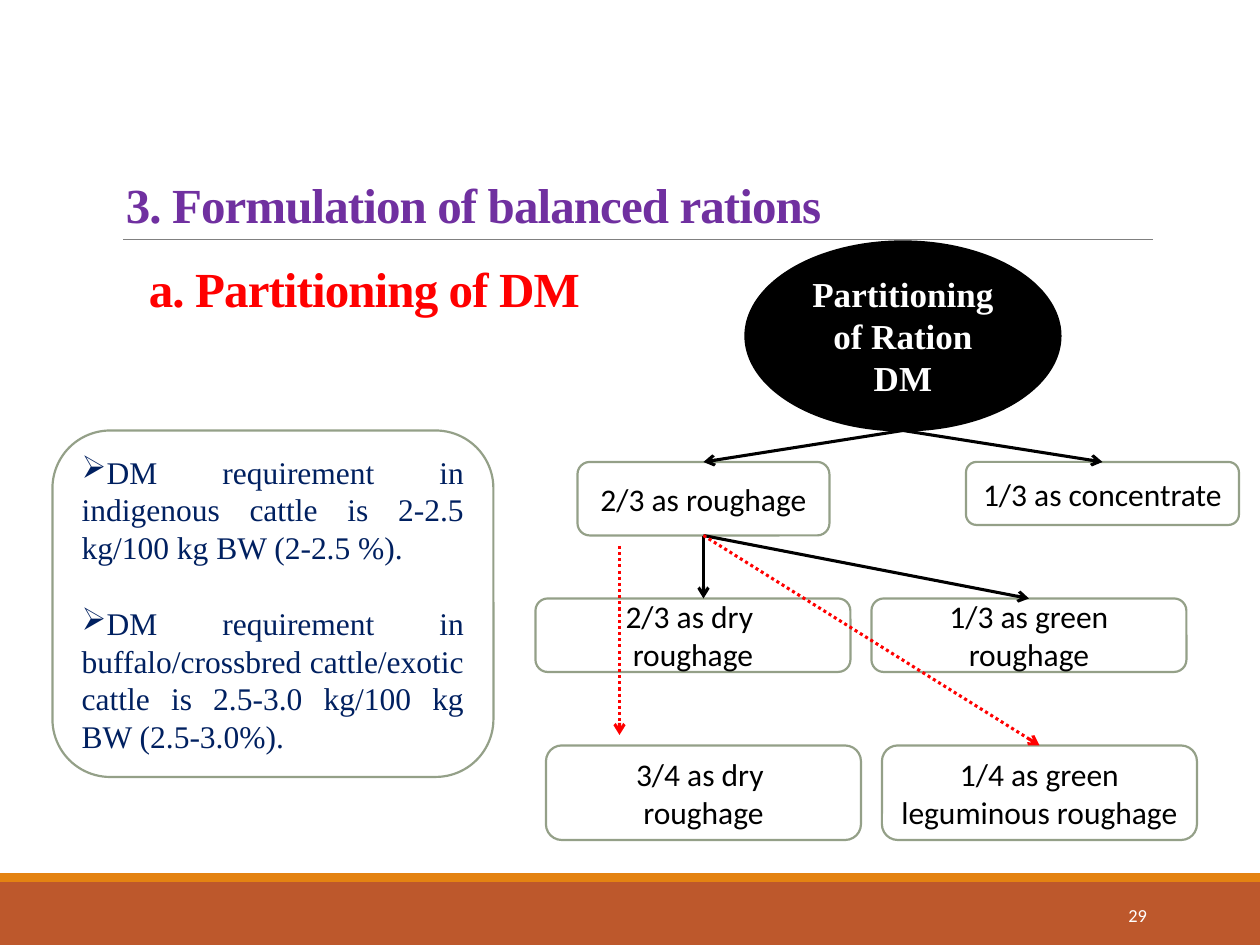
from dataclasses import dataclass
from lxml.etree import SubElement
from pptx import Presentation
from pptx.dml.color import RGBColor
from pptx.enum.dml import MSO_LINE
from pptx.enum.shapes import MSO_CONNECTOR, MSO_SHAPE
from pptx.enum.text import MSO_ANCHOR, PP_ALIGN
from pptx.oxml.ns import qn
from pptx.util import Inches, Pt


@dataclass(frozen=True)
class Theme:
    serif: str = "Times New Roman"
    sans: str = "Calibri"
    white: str = "FFFFFF"
    black: str = "000000"
    red: str = "FF0000"
    purple: str = "7030A0"
    navy: str = "002060"
    sage: str = "94A088"
    gray: str = "808080"
    rust: str = "BD582C"
    orange: str = "E48312"
    head: float = 28
    hub: float = 20
    body: float = 18
    small: float = 10.5
    edge: float = 1.25
    arrow: float = 1.75


class Deck:
    def __init__(self, theme, cols=120, rows=90):
        self.theme = theme
        self.prs = Presentation()
        self.prs.slide_width = Inches(10)
        self.prs.slide_height = Inches(7.5)
        self.col = self.prs.slide_width / cols
        self.row = self.prs.slide_height / rows
        self.slide = self.prs.slides.add_slide(self.prs.slide_layouts[6])

    def place(self, x, y, w=0, h=0):
        return [round(v) for v in
                (x * self.col, y * self.row, w * self.col, h * self.row)]

    def letter(self, shape, text, size, color, font, align, bold=False):
        frame = shape.text_frame
        frame.text = text
        frame.word_wrap = True
        frame.vertical_anchor = MSO_ANCHOR.MIDDLE
        for para in frame.paragraphs:
            para.alignment = align
            for run in para.runs:
                run.font.size = Pt(size)
                run.font.name = font
                run.font.bold = bold
                run.font.color.rgb = RGBColor.from_string(color)
        return frame

    def shape(self, kind, area, fill, line=None):
        item = self.slide.shapes.add_shape(kind, *self.place(*area))
        item.shadow.inherit = False
        item.fill.solid()
        item.fill.fore_color.rgb = RGBColor.from_string(fill)
        if line:
            item.line.color.rgb = RGBColor.from_string(line)
            item.line.width = Pt(self.theme.edge)
        else:
            item.line.fill.background()
        return item

    def band(self, y, h, color):
        self.shape(MSO_SHAPE.RECTANGLE, (0, y, 120, h), color)

    def label(self, area, text, size, color, font, align):
        box = self.slide.shapes.add_textbox(*self.place(*area))
        return self.letter(box, text, size, color, font, align)

    def heading(self, area, text, color):
        t = self.theme
        frame = self.label(area, text, t.head, color, t.serif, PP_ALIGN.LEFT)
        frame.vertical_anchor = MSO_ANCHOR.BOTTOM
        para = frame.paragraphs[0]
        para.line_spacing = 0.85
        run = para.runs[0]
        run.font.bold = True
        run._r.get_or_add_rPr().set("spc", "-50")

    def hub(self, area, text):
        t = self.theme
        item = self.shape(MSO_SHAPE.OVAL, area, t.black, t.black)
        self.letter(item, text, t.hub, t.white, t.serif, PP_ALIGN.CENTER, True)

    def node(self, area, text):
        t = self.theme
        item = self.shape(MSO_SHAPE.ROUNDED_RECTANGLE, area, t.white, t.sage)
        self.letter(item, text, t.body, t.black, t.sans, PP_ALIGN.CENTER)
        return item

    def panel(self, area, points):
        t = self.theme
        item = self.shape(MSO_SHAPE.ROUNDED_RECTANGLE, area, t.white, t.sage)
        frame = self.letter(item, "\n".join(points), t.body, t.navy, t.serif,
                            PP_ALIGN.JUSTIFY)
        for para in frame.paragraphs:
            props = para._p.get_or_add_pPr()
            props.set("marL", "0")
            props.set("indent", "0")
            SubElement(props, qn("a:buChar")).set("char", "➢")
        for para in frame.paragraphs[1:]:
            para.space_before = Pt(1.2 * t.body)

    def line(self, start, end, color, width):
        ends = self.place(*start)[:2] + self.place(*end)[:2]
        item = self.slide.shapes.add_connector(MSO_CONNECTOR.STRAIGHT, *ends)
        item.line.color.rgb = RGBColor.from_string(color)
        item.line.width = Pt(width)
        SubElement(item._element.spPr, qn("a:effectLst"))
        return item

    def arrow(self, start, end, color, source=None, target=None, dots=False):
        item = self.line(start, end, color, self.theme.arrow)
        if dots:
            item.line.dash_style = MSO_LINE.ROUND_DOT
        stroke = item._element.spPr.find(qn("a:ln"))
        SubElement(stroke, qn("a:tailEnd")).set("type", "arrow")
        if source:
            item.begin_connect(source, 2)
        if target:
            item.end_connect(target, 0)


def main():
    t = Theme()
    deck = Deck(t)
    deck.band(84, 6, t.rust)
    deck.band(83.16, 0.84, t.orange)
    deck.line((11.76, 22.8), (109.8, 22.8), t.gray, 0.5)
    deck.label((97.44, 84.72, 12.96, 4.8), "29", t.small, t.white, t.sans,
               PP_ALIGN.RIGHT)
    deck.heading((10.8, 16, 99, 6.8), "3. Formulation of balanced rations",
                 t.purple)

    deck.hub((71, 23, 30, 18), "Partitioning of Ration DM")
    rough = deck.node((55, 44, 24, 7), "2/3 as roughage")
    grain = deck.node((92, 44, 26, 6), "1/3 as concentrate")
    deck.node((51, 57, 30, 7), "2/3 as dry \nroughage")
    green = deck.node((83, 57, 30, 7), "1/3 as green roughage")
    deck.node((52, 71, 30, 9), "3/4 as dry \nroughage")
    legume = deck.node((84, 71, 30, 9), "1/4 as green leguminous roughage")
    deck.panel((5, 41, 42, 33), [
        "DM requirement in indigenous cattle is 2-2.5 kg/100 kg BW "
        "(2-2.5 %).",
        "DM requirement in buffalo/crossbred cattle/exotic cattle is "
        "2.5-3.0 kg/100 kg BW (2.5-3.0%).",
    ])

    root, fork = (86, 41), (67, 51)
    deck.arrow(root, (67, 44), t.black, target=rough)
    deck.arrow(root, (105, 44), t.black, target=grain)
    deck.arrow(fork, (67, 57), t.black, rough)
    deck.arrow(fork, (98, 57), t.black, rough, green)
    deck.arrow(fork, (99, 71), t.red, rough, legume, dots=True)
    deck.arrow((59, 52), (59, 70), t.red, dots=True)
    deck.heading((13, 24, 46, 6.8), "a. Partitioning of DM", t.red)
    deck.prs.save("out.pptx")


if __name__ == "__main__":
    main()
